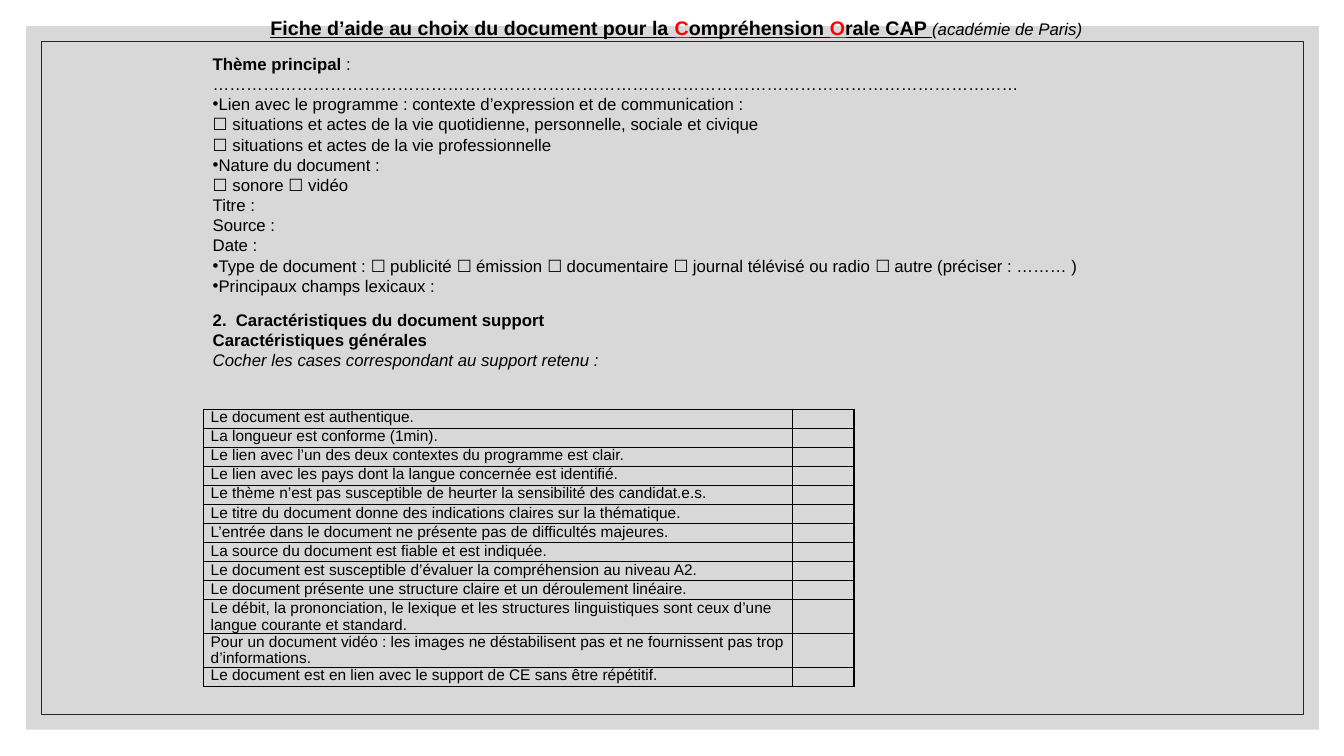
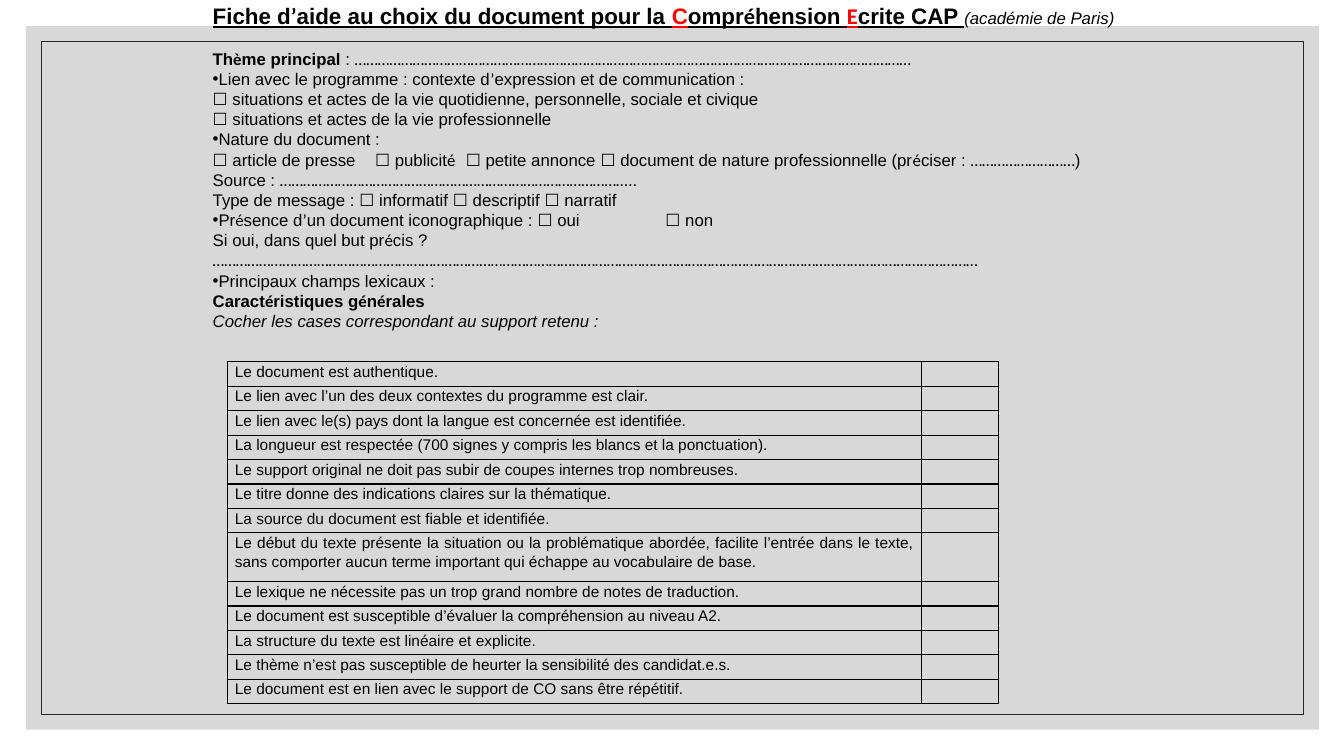
from dataclasses import dataclass
from itertools import groupby

from lxml.etree import SubElement
from pptx import Presentation
from pptx.dml.color import RGBColor
from pptx.enum.shapes import MSO_SHAPE
from pptx.enum.text import MSO_ANCHOR, PP_ALIGN
from pptx.oxml import parse_xml
from pptx.oxml.ns import nsdecls, qn
from pptx.util import Emu, Pt


@dataclass(frozen=True)
class Theme:
    ink: str = "000000"
    initial: str = "FF0000"
    panel: str = "BFBFBF"
    panel_alpha: int = 60000
    outline: str = "262626"
    font: str = "Arial"
    accent_font: str = "Calibri"
    box_font: str = "Noto Sans CJK JP"
    body_size: float = 12
    body_pitch: float = 14.4
    cell_size: float = 11


@dataclass(frozen=True)
class Span:
    text: str
    bold: bool = False
    italic: bool = False
    underline: bool = False
    color: str = Theme.ink
    font: str = ""
    size: float = Theme.body_size


@dataclass(frozen=True)
class Line:
    spans: tuple
    bullet: bool = False
    tabs: tuple = ()
    before: float = 0


@dataclass(frozen=True)
class Sheet:
    form_box: tuple
    table_box: tuple
    answer_width: int
    accent_font: str
    title_align: PP_ALIGN
    title: tuple
    lines: tuple
    criteria: tuple
    cell_pitch: float
    tall_ratio: float
    tall_align: PP_ALIGN


THEME = Theme()
SLIDE_SIZE = (1333, 750)
PANEL_BOX = (26, 26, 1282, 698)
OUTLINE_BOX = (41, 41, 1252, 668)
ACCENTED = "éè’☐…"
WRAP_LENGTH = 90


def px(length):
    return Emu(length * 9144)


def rgb(code):
    return RGBColor.from_string(code)


def style(font, span, name):
    font.name = name
    font.size = Pt(span.size)
    font.bold = span.bold
    font.italic = span.italic
    font.underline = span.underline
    font.color.rgb = rgb(span.color)


def plain(text, bullet=False, tabs=()):
    return Line((Span(text),), bullet, tabs)


def heading(text, size, color=THEME.ink, font=""):
    return Span(text, bold=True, underline=True, color=color, font=font, size=size)


def add_frame(slide):
    panel, outline = [
        slide.shapes.add_shape(MSO_SHAPE.RECTANGLE, *map(px, box))
        for box in (PANEL_BOX, OUTLINE_BOX)
    ]
    for part in (panel, outline):
        part.shadow.inherit = False
    panel.fill.solid()
    panel.fill.fore_color.rgb = rgb(THEME.panel)
    tint = panel.fill._xPr.find(".//" + qn("a:srgbClr"))
    SubElement(tint, qn("a:alpha"), val=str(THEME.panel_alpha))
    panel.line.fill.background()
    outline.fill.background()
    outline.line.color.rgb = rgb(THEME.outline)
    outline.line.width = Pt(0.5)


def add_marks(paragraph, line):
    properties = paragraph._p.get_or_add_pPr()
    if line.bullet:
        SubElement(properties, qn("a:buFont"), typeface=THEME.font)
        SubElement(properties, qn("a:buChar"), char="•")
    if line.tabs:
        stops = SubElement(properties, qn("a:tabLst"))
        for stop in line.tabs:
            SubElement(stops, qn("a:tab"), pos=str(px(stop)), algn="l")


def write_spans(paragraph, spans, accent_font):
    style(paragraph.font, spans[0], THEME.font)
    for span in spans:
        for accented, letters in groupby(span.text, key=lambda letter: letter in ACCENTED):
            run = paragraph.add_run()
            run.text = "".join(letters)
            style(run.font, span, span.font or (accent_font if accented else THEME.font))


def add_form(slide, sheet):
    frame = slide.shapes.add_textbox(*map(px, sheet.form_box)).text_frame
    frame.word_wrap = True
    frame.vertical_anchor = MSO_ANCHOR.TOP
    frame.margin_left, frame.margin_right = px(25), px(8)
    frame.margin_top, frame.margin_bottom = px(8), px(5)
    title = frame.paragraphs[0]
    title.alignment = sheet.title_align
    write_spans(title, sheet.title, sheet.accent_font)
    for line in sheet.lines:
        paragraph = frame.add_paragraph()
        paragraph.line_spacing = Pt(THEME.body_pitch)
        paragraph.space_before = Pt(line.before)
        add_marks(paragraph, line)
        write_spans(paragraph, line.spans, sheet.accent_font)


def format_cell(cell, text, sheet):
    cell.margin_left = cell.margin_right = px(7)
    cell.margin_top = cell.margin_bottom = 0
    cell.fill.background()
    for index, side in enumerate(("lnL", "lnR", "lnT", "lnB")):
        cell._tc.tcPr.insert(index, parse_xml(
            f'<a:{side} {nsdecls("a")} w="12700"><a:solidFill>'
            f'<a:srgbClr val="{THEME.ink}"/></a:solidFill></a:{side}>'
        ))
    paragraph = cell.text_frame.paragraphs[0]
    paragraph.line_spacing = Pt(sheet.cell_pitch)
    if text:
        write_spans(paragraph, (Span(text, size=THEME.cell_size),), THEME.font)
        if len(text) > WRAP_LENGTH:
            paragraph.alignment = sheet.tall_align
    else:
        SubElement(paragraph._p, qn("a:endParaRPr"), sz=str(THEME.cell_size * 100))


def add_checklist(slide, sheet):
    left, top, width, height = sheet.table_box
    table = slide.shapes.add_table(
        len(sheet.criteria), 2, px(left), px(top), px(width), px(height)
    ).table
    table.first_row = table.horz_banding = False
    table.columns[0].width = px(width - sheet.answer_width)
    table.columns[1].width = px(sheet.answer_width)
    weights = [sheet.tall_ratio if len(text) > WRAP_LENGTH else 1 for text in sheet.criteria]
    for row, text, weight in zip(table.rows, sheet.criteria, weights):
        row.height = Emu(int(px(height) * weight / sum(weights)))
        for cell, content in zip(row.cells, (text, "")):
            format_cell(cell, content, sheet)


def add_sheet(deck, sheet):
    slide = deck.slides.add_slide(deck.slide_layouts[6])
    add_frame(slide)
    add_checklist(slide, sheet)
    add_form(slide, sheet)


ACADEMY = Span("(académie de Paris)", italic=True, font=THEME.font)
CONTEXT = (
    plain("Lien avec le programme : contexte d’expression et de communication :", bullet=True),
    plain("☐ situations et actes de la vie quotidienne, personnelle, sociale et civique"),
)
PROFESSIONAL = " situations et actes de la vie professionnelle"
NATURE = plain("Nature du document :", bullet=True)
LEXICAL = plain("Principaux champs lexicaux :", bullet=True)
GENERAL = (
    Line((Span("Caractéristiques générales", bold=True),)),
    Line((Span("Cocher les cases correspondant au support retenu :", italic=True),)),
)


def theme_line(before):
    return Line((Span("Thème principal", bold=True), Span(" : " + "…" * 48)), before=before)


ORAL = Sheet(
    form_box=(186, 8, 953, 374),
    table_box=(202, 406, 645, 275),
    answer_width=61,
    accent_font=THEME.font,
    title_align=PP_ALIGN.CENTER,
    title=(
        heading("Fiche d’aide au choix du document pour la ", 14),
        heading("C", 14, THEME.initial),
        heading("ompréhension ", 14),
        heading("O", 14, THEME.initial),
        heading("rale CAP ", 14),
        ACADEMY,
    ),
    lines=(
        theme_line(10),
        *CONTEXT,
        plain("☐" + PROFESSIONAL),
        NATURE,
        plain("☐ sonore ☐ vidéo"),
        plain("Titre :"),
        plain("Source :"),
        plain("Date :"),
        plain("Type de document : ☐ publicité ☐ émission ☐ documentaire "
              "☐ journal télévisé ou radio ☐ autre (préciser : ……… )", bullet=True),
        LEXICAL,
        Line((Span("2.\tCaractéristiques du document support", bold=True),), tabs=(23,), before=10),
        *GENERAL,
    ),
    criteria=(
        "Le document est authentique.",
        "La longueur est conforme (1min).",
        "Le lien avec l’un des deux contextes du programme est clair.",
        "Le lien avec les pays dont la langue concernée est identifié.",
        "Le thème n’est pas susceptible de heurter la sensibilité des candidat.e.s.",
        "Le titre du document donne des indications claires sur la thématique.",
        "L’entrée dans le document ne présente pas de difficultés majeures.",
        "La source du document est fiable et est indiquée.",
        "Le document est susceptible d’évaluer la compréhension au niveau A2.",
        "Le document présente une structure claire et un déroulement linéaire.",
        "Le débit, la prononciation, le lexique et les structures linguistiques "
        "sont ceux d’une langue courante et standard.",
        "Pour un document vidéo : les images ne déstabilisent pas "
        "et ne fournissent pas trop d’informations.",
        "Le document est en lien avec le support de CE sans être répétitif.",
    ),
    cell_pitch=12,
    tall_ratio=1.77,
    tall_align=PP_ALIGN.LEFT,
)

WRITTEN = Sheet(
    form_box=(186, -6, 945, 370),
    table_box=(226, 359, 764, 339),
    answer_width=76,
    accent_font=THEME.accent_font,
    title_align=PP_ALIGN.LEFT,
    title=(
        heading("Fiche d’aide au choix du document pour la ", 16),
        heading("C", 16, THEME.initial),
        heading("ompréhension ", 16),
        heading("E", 16, THEME.initial, THEME.accent_font),
        heading("crite CAP ", 16),
        ACADEMY,
    ),
    lines=(
        theme_line(14),
        *CONTEXT,
        Line((Span("☐", font=THEME.box_font), Span(PROFESSIONAL))),
        NATURE,
        plain("☐ article de presse\t☐ publicité\t☐ petite annonce "
              "☐ document de nature professionnelle (préciser : " + "…" * 9 + ")",
              tabs=(161, 251)),
        plain("Source : " + "…" * 30 + ".."),
        plain("Type de message : ☐ informatif ☐ descriptif ☐ narratif"),
        plain("Présence d’un document iconographique : ☐ oui\t☐ non", bullet=True, tabs=(449,)),
        plain("Si oui, dans quel but précis ? " + "…" * 66),
        LEXICAL,
        *GENERAL,
    ),
    criteria=(
        "Le document est authentique.",
        "Le lien avec l’un des deux contextes du programme est clair.",
        "Le lien avec le(s) pays dont la langue est concernée est identifiée.",
        "La longueur est respectée (700 signes y compris les blancs et la ponctuation).",
        "Le support original ne doit pas subir de coupes internes trop nombreuses.",
        "Le titre donne des indications claires sur la thématique.",
        "La source du document est fiable et identifiée.",
        "Le début du texte présente la situation ou la problématique abordée, facilite l’entrée "
        "dans le texte, sans comporter aucun terme important qui échappe au vocabulaire de base.",
        "Le lexique ne nécessite pas un trop grand nombre de notes de traduction.",
        "Le document est susceptible d’évaluer la compréhension au niveau A2.",
        "La structure du texte est linéaire et explicite.",
        "Le thème n’est pas susceptible de heurter la sensibilité des candidat.e.s.",
        "Le document est en lien avec le support de CO sans être répétitif.",
    ),
    cell_pitch=13.5,
    tall_ratio=2,
    tall_align=PP_ALIGN.JUSTIFY,
)


def main():
    deck = Presentation()
    deck.slide_width, deck.slide_height = map(px, SLIDE_SIZE)
    for sheet in (ORAL, WRITTEN):
        add_sheet(deck, sheet)
    deck.save("out.pptx")


if __name__ == "__main__":
    main()
